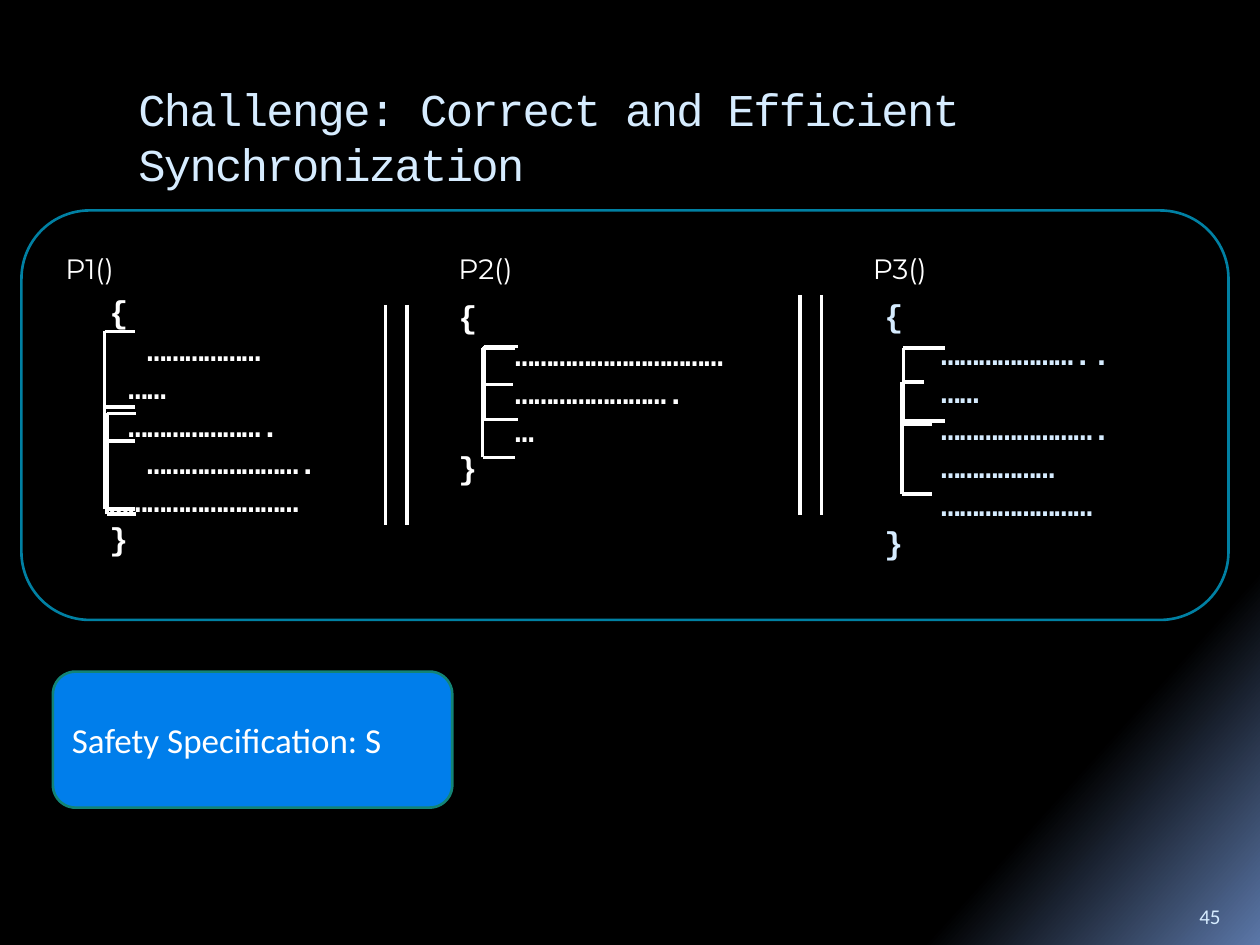
from pptx import Presentation
from pptx.dml.color import RGBColor
from pptx.enum.shapes import MSO_CONNECTOR, MSO_SHAPE
from pptx.enum.text import MSO_ANCHOR, PP_ALIGN
from pptx.oxml.ns import qn
from pptx.util import Inches, Pt
from lxml.etree import SubElement

WHITE = "FFFFFF"
PALE_BLUE = "D6ECFF"
CODE_FONT = "Courier New"

# Process label: (left, top, width, height), then its code
PROCESSES = [
    ("P1()", (0.42, 1.84, 2.25, 0.58), (0.77, 2.27, 2.32, 2.22), WHITE,
     ["{", "  ………………", " ……", " ………………….", "  …………………….", "…………………………", "}"]),
    ("P2()", (3.54, 1.84, 1.67, 0.58), (3.54, 2.31, 2.5, 1.6), WHITE,
     ["{", "   ……………………………", "   …………………….", "   …", "}"]),
    ("P3()", (6.83, 1.84, 2.25, 0.58), (6.92, 2.3, 2.42, 2.2), PALE_BLUE,
     ["{", "   …………………..", "   ……", "   …………………….", "   ………………",
      "   ……………………", "}"]),
]

# Atomic sections: left, right, top, bottom
BRACKETS = [
    (3.84, 4.11, 2.75, 3.33), (7.17, 7.5, 2.76, 3.34), (0.83, 1.07, 2.63, 3.5),
    (7.16, 7.33, 3.03, 3.92), (3.83, 4.09, 2.76, 3.63), (7.16, 7.4, 3.37, 3.92),
    (3.83, 4.07, 3.05, 3.63), (0.85, 1.08, 3.28, 4.08), (0.83, 1.07, 3.23, 4.04),
]


def color(value):
    return RGBColor.from_string(value)


def fill_background(slide):
    fill = slide.background.fill
    fill.gradient()
    fill.gradient_angle = 360 - 42
    for stop, position, value in zip(fill.gradient_stops, (0.84, 1), ("000000", "5B77A8")):
        stop.position = position
        stop.color.rgb = color(value)


def write_lines(shape, lines, font, size, value, anchor=MSO_ANCHOR.TOP,
                bold=False, pitch=None, spacing=None):
    frame = shape.text_frame
    frame.word_wrap = True
    frame.vertical_anchor = anchor
    frame.text = "\n".join(lines)
    for para in frame.paragraphs:
        para.alignment = PP_ALIGN.LEFT
        if pitch:
            para.line_spacing = Pt(pitch)
        for span in para.runs:
            span.font.name = font
            span.font.size = Pt(size)
            span.font.bold = bold
            span.font.color.rgb = color(value)
            if spacing:
                span.font._element.set("spc", str(spacing * 100))


def add_text(slide, place, lines, font, size, value, **options):
    box = slide.shapes.add_textbox(*map(Inches, place))
    write_lines(box, lines, font, size, value, **options)


def add_panel(slide, place, line, fill=None):
    panel = slide.shapes.add_shape(MSO_SHAPE.ROUNDED_RECTANGLE, *map(Inches, place))
    panel.shadow.inherit = False
    if fill:
        panel.fill.solid()
        panel.fill.fore_color.rgb = color(fill)
    else:
        panel.fill.background()
    panel.line.color.rgb = color(line)
    panel.line.width = Pt(1.5)
    return panel


def add_line_group(slide, segments):
    group = slide.shapes.add_group_shape()
    for ends in segments:
        line = group.shapes.add_connector(MSO_CONNECTOR.STRAIGHT, *map(Inches, ends))
        line.line.color.rgb = color(WHITE)
        line.line.width = Pt(2)
        SubElement(line._element.spPr, qn("a:effectLst"))


def add_bracket(slide, left, right, top, bottom):
    add_line_group(slide, [(left, bottom, left, top),
                           (left, top, right, top),
                           (left, bottom, right, bottom)])


def add_parallel_bars(slide, left, top):
    add_line_group(slide, [(x, top, x, top + 1.75) for x in (left, left + 0.17)])


def main():
    deck = Presentation()
    deck.slide_width, deck.slide_height = Inches(10), Inches(7.5)
    slide = deck.slides.add_slide(deck.slide_layouts[6])
    fill_background(slide)

    # Brackets around the atomic sections
    for bracket in BRACKETS:
        add_bracket(slide, *bracket)

    # Title and program frame
    add_text(slide, (1, 0.56, 8.5, 1), ["Challenge: Correct and Efficient Synchronization"],
             CODE_FONT, 26, PALE_BLUE, anchor=MSO_ANCHOR.BOTTOM, pitch=31.2, spacing=-1)
    add_panel(slide, (0.17, 1.67, 9.58, 3.25), "0080A3")

    # Three processes, composed in parallel
    for name, name_place, code_place, code_color, code in PROCESSES:
        add_text(slide, code_place, code, CODE_FONT, 18, code_color, bold=True, pitch=21.6)
        add_text(slide, name_place, [name], "Montserrat", 16, WHITE, anchor=MSO_ANCHOR.MIDDLE)
    add_parallel_bars(slide, 3.06, 2.42)
    add_parallel_bars(slide, 6.35, 2.34)

    # Specification and slide number
    specification = add_panel(slide, (0.42, 5.33, 3.17, 1.08), "138476", "007EEB")
    write_lines(specification, ["Safety Specification: S"], "Calibri", 20, WHITE,
                anchor=MSO_ANCHOR.MIDDLE)
    add_text(slide, (9.42, 7.02, 0.5, 0.4), ["45"], "Calibri", 12, PALE_BLUE,
             anchor=MSO_ANCHOR.BOTTOM)

    deck.save("out.pptx")


if __name__ == "__main__":
    main()
